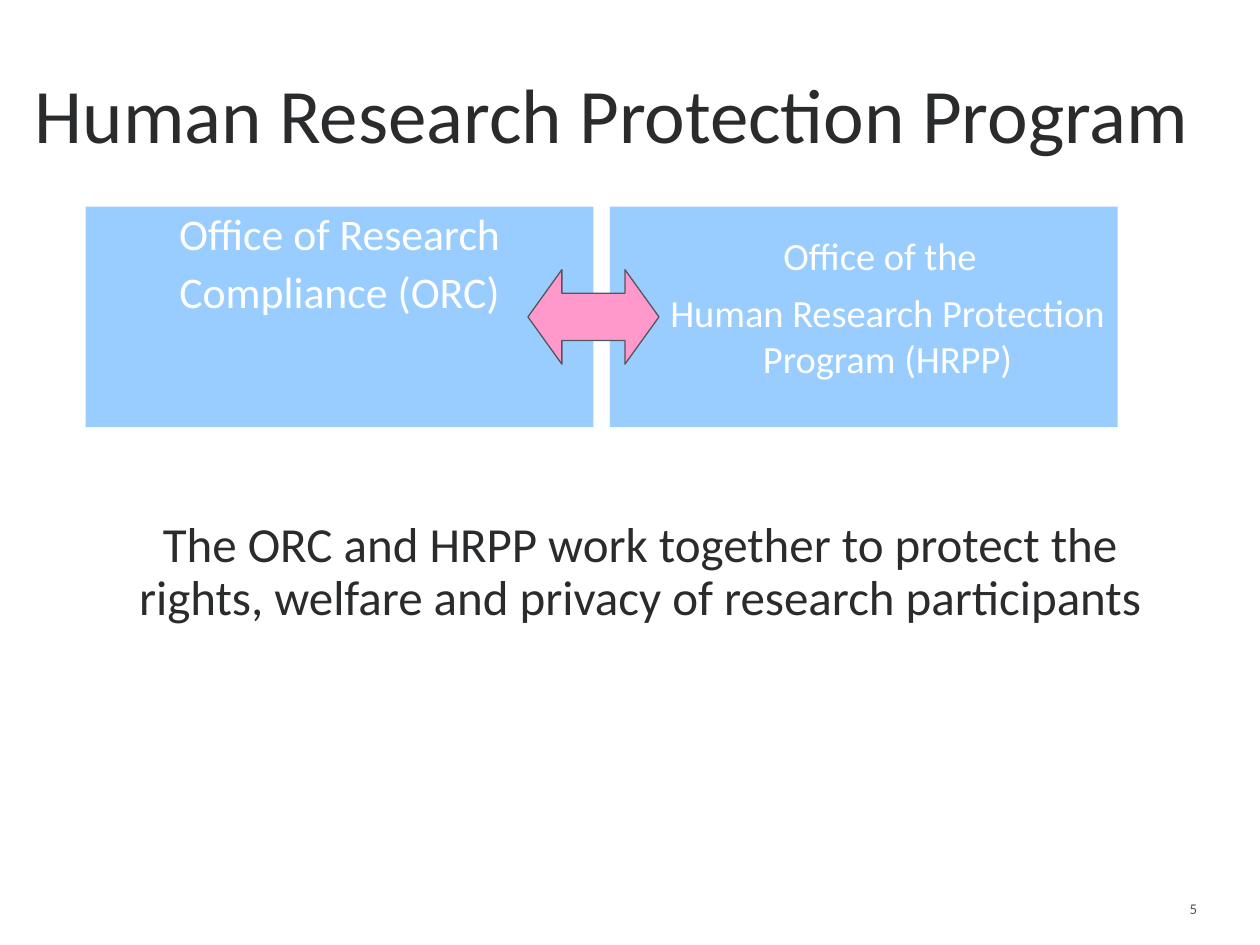
from dataclasses import dataclass

from pptx import Presentation
from pptx import util as u
from pptx.dml.color import RGBColor
from pptx.enum import shapes, text


@dataclass(frozen=True)
class Theme:
    """Colours, font and type sizes of the slide."""
    font: str = "Calibri"
    ink: str = "2A2B2D"
    grey: str = "53565A"
    white: str = "FFFFFF"
    panel: str = "99CCFF"
    arrow: str = "FF99CC"
    title: float = 44
    statement: float = 28
    office: float = 25
    program: float = 22
    number: float = 8.5


class Deck:
    """Holds the theme and the current slide, laid out on a grid of cells."""
    COLS, ROWS = 10, 7.5

    def __init__(self, theme):
        """Start a presentation with one blank slide."""
        self.t = theme
        self.prs = Presentation()
        self.prs.slide_width, self.prs.slide_height = u.Inches(10), u.Inches(7.5)
        self.s = self.prs.slides.add_slide(self.prs.slide_layouts[6])

    def cells(self, x, y, w, h):
        """Turn columns and rows into slide lengths."""
        col = self.prs.slide_width / self.COLS
        row = self.prs.slide_height / self.ROWS
        return [round(n * size) for n, size in zip((x, y, w, h), (col, row, col, row))]

    def set_text(self, sp, lines, size, color, align=text.PP_ALIGN.CENTER,
                 anchor=text.MSO_ANCHOR.TOP, insets=(0, 0, 0, 0), gap=0,
                 spacing=None, indents=()):
        """Set the paragraphs of a shape and format them."""
        tf = sp.text_frame
        tf.text = "\n".join(lines)
        tf.word_wrap = True
        tf.vertical_anchor = anchor
        tf.margin_left, tf.margin_top, tf.margin_right, tf.margin_bottom = map(u.Inches, insets)
        for i, p in enumerate(tf.paragraphs):
            p.alignment = align
            p.line_spacing = spacing
            p.space_before = u.Pt(gap if i else 0)
            if indents:
                p._p.get_or_add_pPr().set("marL", str(u.Inches(indents[i])))
            for r in p.runs:
                r.font.name, r.font.size = self.t.font, u.Pt(size)
                r.font.color.rgb = RGBColor.from_string(color)

    def label(self, box, line, size, color, **style):
        """Add a text box."""
        sp = self.s.shapes.add_textbox(*self.cells(*box))
        self.set_text(sp, [line], size, color, **style)

    def shape(self, kind, box, fill, line=None):
        """Add a filled preset shape with an optional outline."""
        sp = self.s.shapes.add_shape(kind, *self.cells(*box))
        sp.shadow.inherit = False
        sp.fill.solid()
        sp.fill.fore_color.rgb = RGBColor.from_string(fill)
        if line:
            sp.line.color.rgb = RGBColor.from_string(line)
            sp.line.width = u.Pt(0.75)
        else:
            sp.line.fill.background()
        return sp

    def panel(self, index, lines, size, **style):
        """Add one of the equal panels in the office row."""
        box = (0.68 + index * 4.16, 1.64, 4.03, 1.75)
        sp = self.shape(shapes.MSO_SHAPE.RECTANGLE, box, self.t.panel)
        self.set_text(sp, lines, size, self.t.white, **style)

    def double_arrow(self, box):
        """Add a two-way block arrow."""
        sp = self.shape(shapes.MSO_SHAPE.LEFT_RIGHT_ARROW, box, self.t.arrow, self.t.grey)
        sp.adjustments[0], sp.adjustments[1] = 0.5, 0.36


def main():
    """Build and save the slide."""
    t = Theme()
    d = Deck(t)
    d.label((0.22, 0.53, 9.28, 1.1), "Human Research Protection Program", t.title, t.ink)
    d.label((8.69, 6.97, 0.81, 0.31), "5", t.number, t.grey,
            align=text.PP_ALIGN.RIGHT, anchor=text.MSO_ANCHOR.BOTTOM)
    d.panel(0, ["Office of Research", "Compliance (ORC)"], t.office, gap=3)
    d.panel(1, ["Office of the", "Human Research Protection Program (HRPP)"], t.program,
            gap=6, insets=(0.1, 0.2, 0.05, 0.05), indents=(0.21, 0.33))
    d.double_arrow((4.19, 2.14, 1.04, 0.75))
    d.label((0.83, 4.08, 8.5, 0.94),
            "The ORC and HRPP work together to protect the rights, "
            "welfare and privacy of research participants",
            t.statement, t.ink, spacing=0.9, insets=(0.1, 0.05, 0.1, 0.05))
    d.prs.save("out.pptx")


if __name__ == "__main__":
    main()
